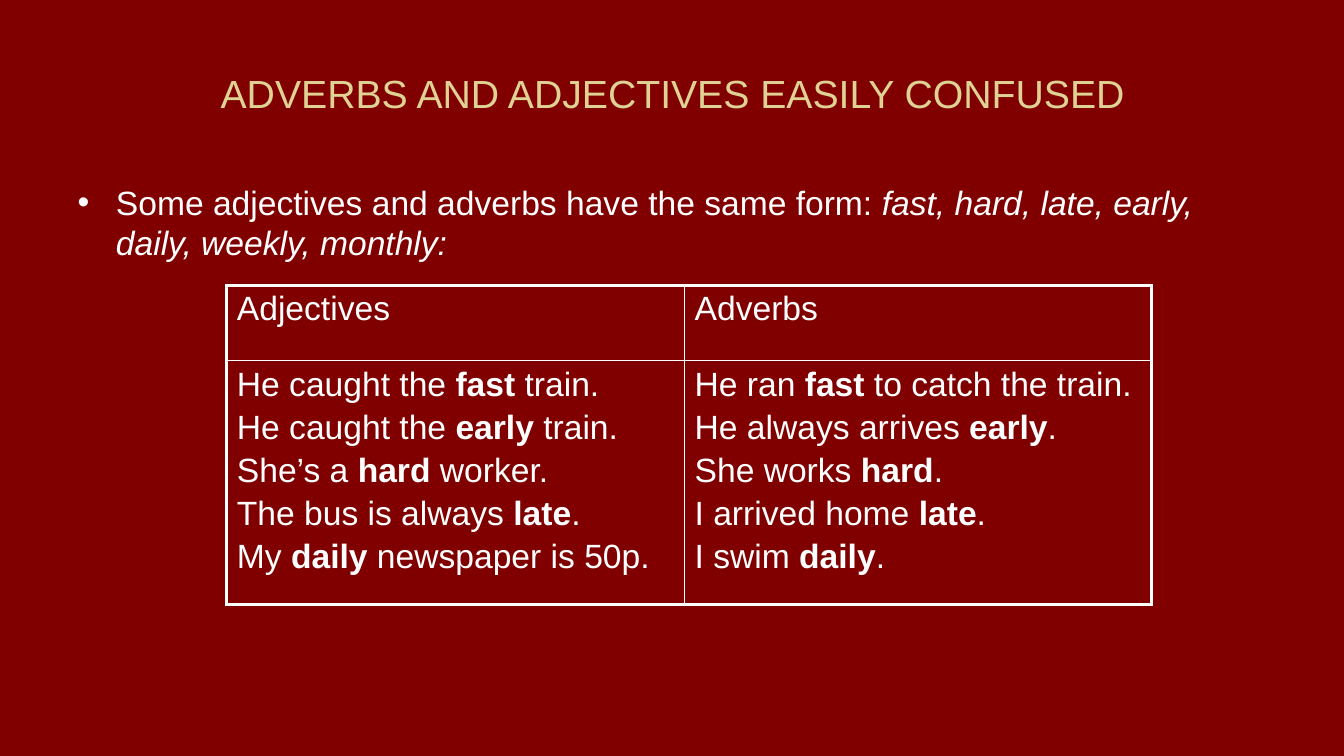
import pptx
import pptx.dml.color
import pptx.enum.text
import pptx.oxml
import pptx.oxml.ns
import pptx.util
from lxml import etree

Inches = pptx.util.Inches
Pt = pptx.util.Pt
RGBColor = pptx.dml.color.RGBColor
qn = pptx.oxml.ns.qn

MAROON = RGBColor(0x80, 0x00, 0x00)
SAND = RGBColor(0xDF, 0xD2, 0x93)
WHITE = RGBColor(0xFF, 0xFF, 0xFF)

# Each sentence is (before, emphasised word, after)
ADJECTIVES = [
    ("He caught the ", "fast", " train."),
    ("He caught the ", "early", " train."),
    ("She’s a ", "hard", " worker."),
    ("The bus is always ", "late", "."),
    ("My ", "daily", " newspaper is 50p."),
]
ADVERBS = [
    ("He ran ", "fast", " to catch the train."),
    ("He always arrives ", "early", "."),
    ("She works ", "hard", "."),
    ("I arrived home ", "late", "."),
    ("I swim ", "daily", "."),
]
TABLE_CELLS = [
    [[("Adjectives",)], [("Adverbs",)]],
    [ADJECTIVES, ADVERBS],
]


class GrammarSlide:
    FONT = "Arial"
    TITLE_SIZE = 28
    TEXT_SIZE = 24
    SPACE_BEFORE = 4
    OUTER_LINE = 2.25
    INNER_LINE = 1

    def __init__(self, deck):
        self.page = deck.slides.add_slide(deck.slide_layouts[1])
        self.page.background.fill.solid()
        self.page.background.fill.fore_color.rgb = MAROON

    def add_span(self, para, text, size=TEXT_SIZE, color=WHITE, bold=False, italic=False):
        span = para.add_run()
        span.text = text
        span.font.name = self.FONT
        span.font.size = Pt(size)
        span.font.color.rgb = color
        span.font.bold = bold
        span.font.italic = italic

    def place(self, box, left, top, width, height):
        box.left, box.top = Inches(left), Inches(top)
        box.width, box.height = Inches(width), Inches(height)
        box.text_frame.word_wrap = True
        box.text_frame.auto_size = pptx.enum.text.MSO_AUTO_SIZE.NONE
        return box.text_frame

    def add_title(self, text):
        frame = self.place(self.page.shapes.title, 0.67, 0.3, 12, 1.25)
        frame.vertical_anchor = pptx.enum.text.MSO_ANCHOR.MIDDLE
        para = frame.paragraphs[0]
        para.alignment = pptx.enum.text.PP_ALIGN.CENTER
        self.add_span(para, text, self.TITLE_SIZE, SAND)

    def add_bullet(self, lead, examples):
        frame = self.place(self.page.placeholders[1], 0.67, 1.75, 12, 4.95)
        para = frame.paragraphs[0]
        para.space_before = Pt(self.SPACE_BEFORE)
        props = para._p.get_or_add_pPr()
        props.set("marL", str(Inches(0.38)))
        props.set("indent", str(-Inches(0.38)))
        etree.SubElement(props, qn("a:buChar")).set("char", "•")
        self.add_span(para, lead)
        self.add_span(para, examples, italic=True)

    def add_borders(self, cell, widths):
        props = cell._tc.get_or_add_tcPr()
        for position, (side, width) in enumerate(widths.items()):
            line = etree.Element(qn("a:ln" + side), w=str(Pt(width)))
            fill = etree.SubElement(line, qn("a:solidFill"))
            etree.SubElement(fill, qn("a:srgbClr"), val=str(WHITE))
            props.insert(position, line)

    def fill_cell(self, cell, sentences):
        cell.fill.background()
        frame = cell.text_frame
        for number, sentence in enumerate(sentences):
            para = frame.add_paragraph() if number else frame.paragraphs[0]
            para.space_before = Pt(self.SPACE_BEFORE)
            for position, text in enumerate(sentence):
                self.add_span(para, text, bold=position == 1)

    def add_table(self, cells, left, top, widths, heights):
        table = self.page.shapes.add_table(
            len(heights), len(widths), Inches(left), Inches(top),
            Inches(sum(widths)), Inches(sum(heights))).table
        table.first_row = table.horz_banding = False
        for column, width in zip(table.columns, widths):
            column.width = Inches(width)
        for row, height in zip(table.rows, heights):
            row.height = Inches(height)

        last_row, last_column = len(heights) - 1, len(widths) - 1
        for r, row_cells in enumerate(cells):
            for c, sentences in enumerate(row_cells):
                cell = table.cell(r, c)
                self.fill_cell(cell, sentences)
                outer = {"L": c == 0, "R": c == last_column,
                         "T": r == 0, "B": r == last_row}
                self.add_borders(cell, {
                    side: self.OUTER_LINE if edge else self.INNER_LINE
                    for side, edge in outer.items()})


def main():
    deck = pptx.Presentation()
    deck.slide_width, deck.slide_height = Inches(13.33), Inches(7.5)
    slide = GrammarSlide(deck)

    # Heading and rule
    slide.add_title("ADVERBS AND ADJECTIVES EASILY CONFUSED")
    slide.add_bullet("Some adjectives and adverbs have the same form: ",
                     "fast, hard, late, early, daily, weekly, monthly:")

    # Comparison of example sentences
    slide.add_table(TABLE_CELLS, 2.25, 2.83, [4.54, 4.63], [0.75, 2.42])

    deck.save("out.pptx")


if __name__ == "__main__":
    main()
